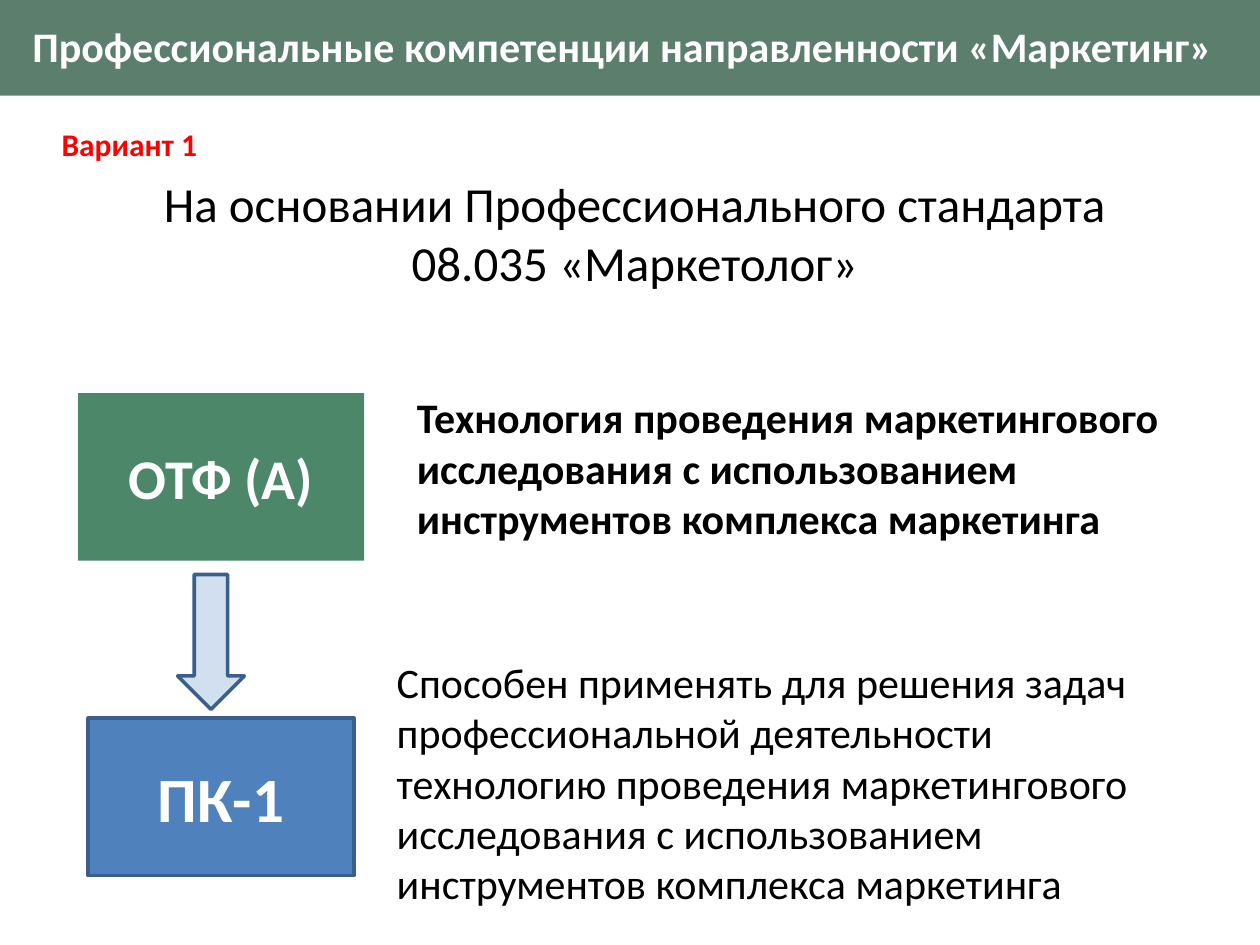
from dataclasses import dataclass
from typing import Optional

from pptx import Presentation
from pptx.dml.color import RGBColor
from pptx.enum.shapes import MSO_SHAPE as Shape
from pptx.enum.text import MSO_ANCHOR as Anchor, PP_ALIGN as Align
from pptx.oxml.ns import qn
from pptx.util import Inches, Pt
from lxml.etree import SubElement

WHITE = RGBColor(0xFF, 0xFF, 0xFF)
BLACK = RGBColor(0x00, 0x00, 0x00)
RED = RGBColor(0xFF, 0x00, 0x00)
DARK_GREEN = RGBColor(0x34, 0x5E, 0x48)
GREEN = RGBColor(0x4B, 0x87, 0x68)
BLUE = RGBColor(0x4F, 0x81, 0xBD)
BLUE_EDGE = RGBColor(0x3A, 0x5F, 0x8C)


@dataclass
class Label:
    lines: list[str]
    size: int
    color: RGBColor = BLACK
    bold: bool = False
    align: Align = Align.LEFT
    anchor: Anchor = Anchor.TOP


@dataclass
class Block:
    """A filled shape; place is left, top, width, height in inches."""
    place: tuple[float, float, float, float]
    fill: RGBColor
    kind: Shape = Shape.RECTANGLE
    edge: Optional[RGBColor] = None
    opacity: int = 100
    label: Optional[Label] = None


@dataclass
class TextArea:
    place: tuple[float, float, float, float]
    label: Label


def heading(text: str, size: int) -> Label:
    return Label([text], size, WHITE, True, Align.CENTER, Anchor.MIDDLE)


def write(shape, label: Label) -> None:
    frame = shape.text_frame
    frame.word_wrap = True
    frame.vertical_anchor = label.anchor
    look = {"name": "Calibri", "size": Pt(label.size), "bold": label.bold}
    for index, line in enumerate(label.lines):
        para = frame.add_paragraph() if index else frame.paragraphs[0]
        para.alignment = label.align
        span = para.add_run()
        span.text = line
        for name, value in look.items():
            setattr(span.font, name, value)
        span.font.color.rgb = label.color


def draw_block(page, block: Block) -> None:
    box = page.shapes.add_shape(block.kind, *map(Inches, block.place))
    box.shadow.inherit = False
    box.fill.solid()
    box.fill.fore_color.rgb = block.fill
    if block.opacity < 100:
        color = box.fill._xPr.find(qn("a:solidFill"))[0]
        SubElement(color, qn("a:alpha")).set("val", str(block.opacity * 1000))
    if block.edge is None:
        box.line.fill.background()
    else:
        box.line.color.rgb = block.edge
        box.line.width = Pt(2)
    if block.label:
        write(box, block.label)


def draw_text(page, area: TextArea) -> None:
    write(page.shapes.add_textbox(*map(Inches, area.place)), area.label)


BLOCKS = [
    # Title band
    Block((0, 0, 10, 0.76), DARK_GREEN, opacity=80),
    # Function, arrow and the competence it leads to
    Block((0.62, 3.12, 2.27, 1.33), GREEN, label=heading("ОТФ (А)", 32)),
    Block((1.41, 4.56, 0.53, 1.07), BLUE, Shape.DOWN_ARROW, BLUE_EDGE, 25),
    Block((0.7, 5.7, 2.11, 1.25), BLUE, edge=BLUE_EDGE, label=heading("ПК-1", 36)),
]

TEXTS = [
    # Title, variant and standard
    TextArea((0, 0.04, 9.88, 0.64),
             heading("Профессиональные компетенции направленности «Маркетинг»", 24)),
    TextArea((0.39, 0.94, 2.03, 0.4), Label(["Вариант 1"], 18, RED, True)),
    TextArea((0.47, 1.33, 9.22, 1.04),
             Label(["На основании Профессионального стандарта ",
                    "08.035 «Маркетолог» "], 28, align=Align.CENTER)),
    # Descriptions beside the blocks
    TextArea((3.21, 3.06, 6.48, 1.31),
             Label(["Технология проведения маркетингового исследования "
                    "с использованием инструментов комплекса маркетинга"],
                   24, bold=True)),
    TextArea((3.05, 5.16, 6.48, 2.12),
             Label(["Способен применять для решения задач профессиональной "
                    "деятельности технологию проведения маркетингового "
                    "исследования с использованием инструментов комплекса "
                    "маркетинга"], 24)),
]


def main() -> None:
    deck = Presentation()
    deck.slide_width, deck.slide_height = Inches(10), Inches(7.5)
    page = deck.slides.add_slide(deck.slide_layouts[6])
    for block in BLOCKS:
        draw_block(page, block)
    for area in TEXTS:
        draw_text(page, area)
    deck.save("out.pptx")


if __name__ == "__main__":
    main()
